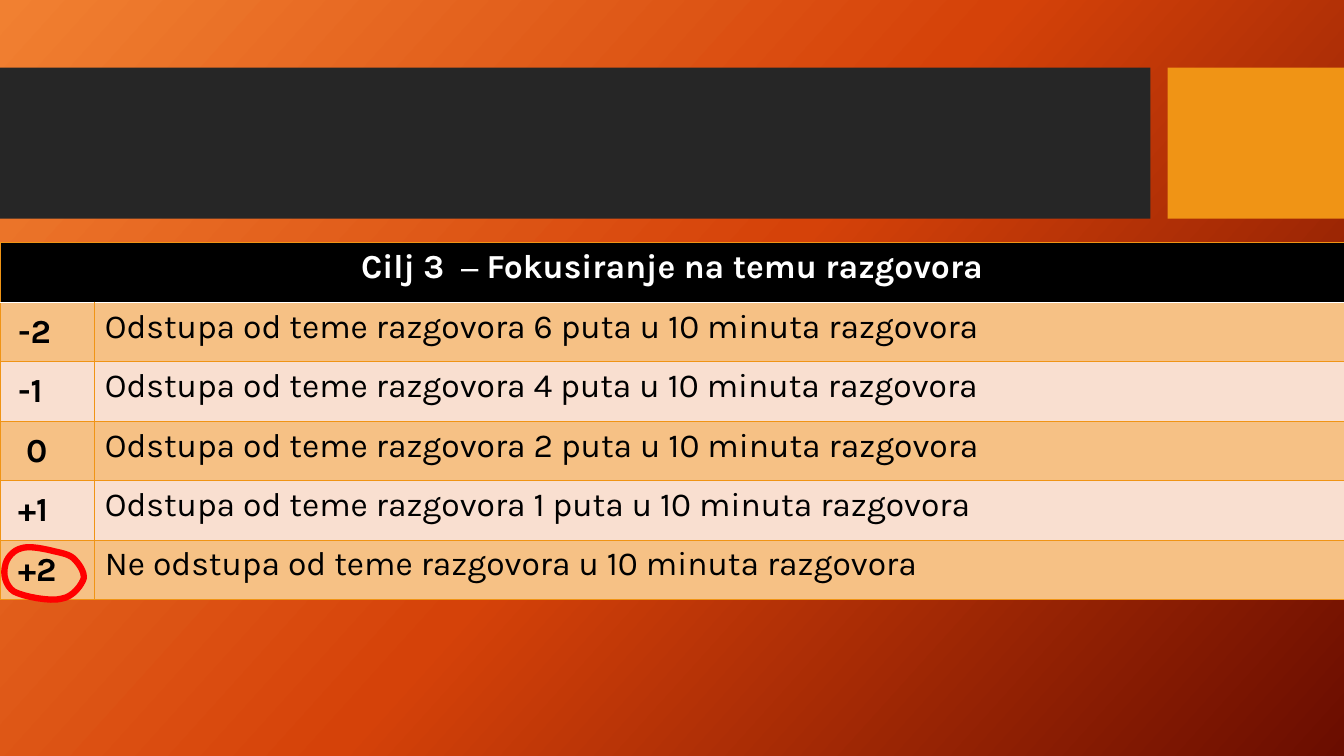
from copy import deepcopy
from dataclasses import dataclass

from lxml import etree
from pptx import Presentation
from pptx import util as u
from pptx.dml.color import RGBColor
from pptx.enum import shapes, text
from pptx.oxml.ns import qn


@dataclass(frozen=True)
class Theme:
    background: tuple = ("F18031", "D54209", "6A0D00")
    angle: int = 42
    band: str = "262626"
    accent: str = "F09415"
    heading_fill: str = "000000"
    heading_text: str = "FFFFFF"
    body_text: str = "000000"
    row_fills: tuple = ("F6C185", "F9DFD0")
    mark: str = "FF0000"
    font: str = "Karla"
    dash_font: str = "Times New Roman"
    size: int = 24
    border: float = 0.75
    heading_rule: float = 1
    mark_width: float = 4.5


GOAL = (("Cilj 3  ", False), ("– ", True), ("Fokusiranje na temu razgovora", False))
LEVELS = (
    ("-2", "Odstupa od teme razgovora 6 puta u 10 minuta razgovora"),
    ("-1", "Odstupa od teme razgovora 4 puta u 10 minuta razgovora"),
    ("0", "Odstupa od teme razgovora 2 puta u 10 minuta razgovora"),
    ("+1", "Odstupa od teme razgovora 1 puta u 10 minuta razgovora"),
    ("+2", "Ne odstupa od teme razgovora u 10 minuta razgovora"),
)
MARK_START = (0.73, 5.54)
MARK_CURVES = (
    ((0.68, 5.5), (0.63, 5.49), (0.54, 5.47)),
    ((0.46, 5.45), (0.29, 5.41), (0.21, 5.44)),
    ((0.13, 5.46), (0.06, 5.54), (0.05, 5.62)),
    ((0.03, 5.69), (0.05, 5.81), (0.14, 5.87)),
    ((0.24, 5.92), (0.5, 5.97), (0.61, 5.94)),
    ((0.73, 5.92), (0.81, 5.8), (0.83, 5.74)),
    ((0.84, 5.67), (0.78, 5.59), (0.73, 5.54)),
)


def curve_points(start, curves, steps=8):
    for first, second, end in curves:
        for step in range(1, steps + 1):
            t = step / steps
            weights = ((1 - t) ** 3, 3 * t * (1 - t) ** 2, 3 * t * t * (1 - t), t ** 3)
            controls = (start, first, second, end)
            yield tuple(
                u.Inches(sum(w * point[axis] for w, point in zip(weights, controls)))
                for axis in (0, 1)
            )
        start = end


class GoalSlide:
    def __init__(self, slide, theme):
        self.slide = slide
        self.theme = theme

    def background(self):
        fill = self.slide.background.fill
        fill.gradient()
        fill.gradient_angle = 360 - self.theme.angle
        first_stop = self.slide.element.xpath(".//p:bg//a:gs")[0]
        first_stop.addnext(deepcopy(first_stop))
        colours = self.theme.background
        for index, (stop, colour) in enumerate(zip(fill.gradient_stops, colours)):
            stop.position = index / (len(colours) - 1)
            stop.color.rgb = RGBColor.from_string(colour)

    def band(self, left, width, colour):
        band = self.slide.shapes.add_shape(
            shapes.MSO_SHAPE.RECTANGLE,
            u.Inches(left), u.Inches(0.67), u.Inches(width), u.Inches(1.5),
        )
        band.shadow.inherit = False
        band.fill.solid()
        band.fill.fore_color.rgb = RGBColor.from_string(colour)
        band.line.fill.background()

    def border(self, cell, side, colour, width):
        line = etree.SubElement(
            cell._tc.get_or_add_tcPr(), qn(f"a:ln{side}"), w=str(u.Pt(width))
        )
        solid = etree.SubElement(line, qn("a:solidFill"))
        etree.SubElement(solid, qn("a:srgbClr"), val=colour)

    def cell(self, cell, fill, runs, colour, bold, bottom=None):
        for side in "LRTB":
            self.border(cell, side, self.theme.accent, self.theme.border)
        if bottom:
            rule = cell._tc.tcPr.find(qn("a:lnB"))
            cell._tc.tcPr.remove(rule)
            self.border(cell, "B", bottom, self.theme.heading_rule)
        cell.fill.solid()
        cell.fill.fore_color.rgb = RGBColor.from_string(fill)
        paragraph = cell.text_frame.paragraphs[0]
        for words, dash in runs:
            run = paragraph.add_run()
            run.text = words
            if dash:
                run.font.name = self.theme.dash_font
        paragraph.font.name = self.theme.font
        paragraph.font.size = u.Pt(self.theme.size)
        paragraph.font.bold = bold
        paragraph.font.color.rgb = RGBColor.from_string(colour)
        return paragraph

    def scale_table(self, goal, levels):
        theme = self.theme
        row_height = u.Inches(0.59)
        scale = self.slide.shapes.add_table(
            len(levels) + 1, 2, 0, u.Inches(2.41),
            u.Inches(13.33), row_height * (len(levels) + 1),
        ).table
        for column, width in zip(scale.columns, (0.94, 12.39)):
            column.width = u.Inches(width)
        for row in scale.rows:
            row.height = row_height
        heading = scale.cell(0, 0)
        heading.merge(scale.cell(0, 1))
        title = self.cell(
            heading, theme.heading_fill, goal, theme.heading_text, True,
            bottom=theme.heading_text,
        )
        title.alignment = text.PP_ALIGN.CENTER
        for index, (score, description) in enumerate(levels):
            fill = theme.row_fills[index % len(theme.row_fills)]
            score_cell = scale.cell(index + 1, 0)
            self.cell(score_cell, fill, [(score, False)], theme.body_text, True)
            score_cell.vertical_anchor = text.MSO_ANCHOR.MIDDLE
            score_cell.margin_left = u.Inches(0.26 if score == "0" else 0.18)
            self.cell(
                scale.cell(index + 1, 1), fill, [(description, False)],
                theme.body_text, False,
            )

    def mark(self, start, curves):
        builder = self.slide.shapes.build_freeform(*(u.Inches(v) for v in start))
        builder.add_line_segments(curve_points(start, curves), close=True)
        ring = builder.convert_to_shape()
        ring.shadow.inherit = False
        ring.fill.background()
        ring.line.color.rgb = RGBColor.from_string(self.theme.mark)
        ring.line.width = u.Pt(self.theme.mark_width)


def main():
    deck = Presentation()
    deck.slide_width = u.Inches(13.33)
    deck.slide_height = u.Inches(7.5)
    theme = Theme()
    goal_slide = GoalSlide(deck.slides.add_slide(deck.slide_layouts[6]), theme)
    goal_slide.background()
    goal_slide.band(0, 11.41, theme.band)
    goal_slide.band(11.58, 1.75, theme.accent)
    goal_slide.scale_table(GOAL, LEVELS)
    goal_slide.mark(MARK_START, MARK_CURVES)
    deck.save("out.pptx")


if __name__ == "__main__":
    main()
